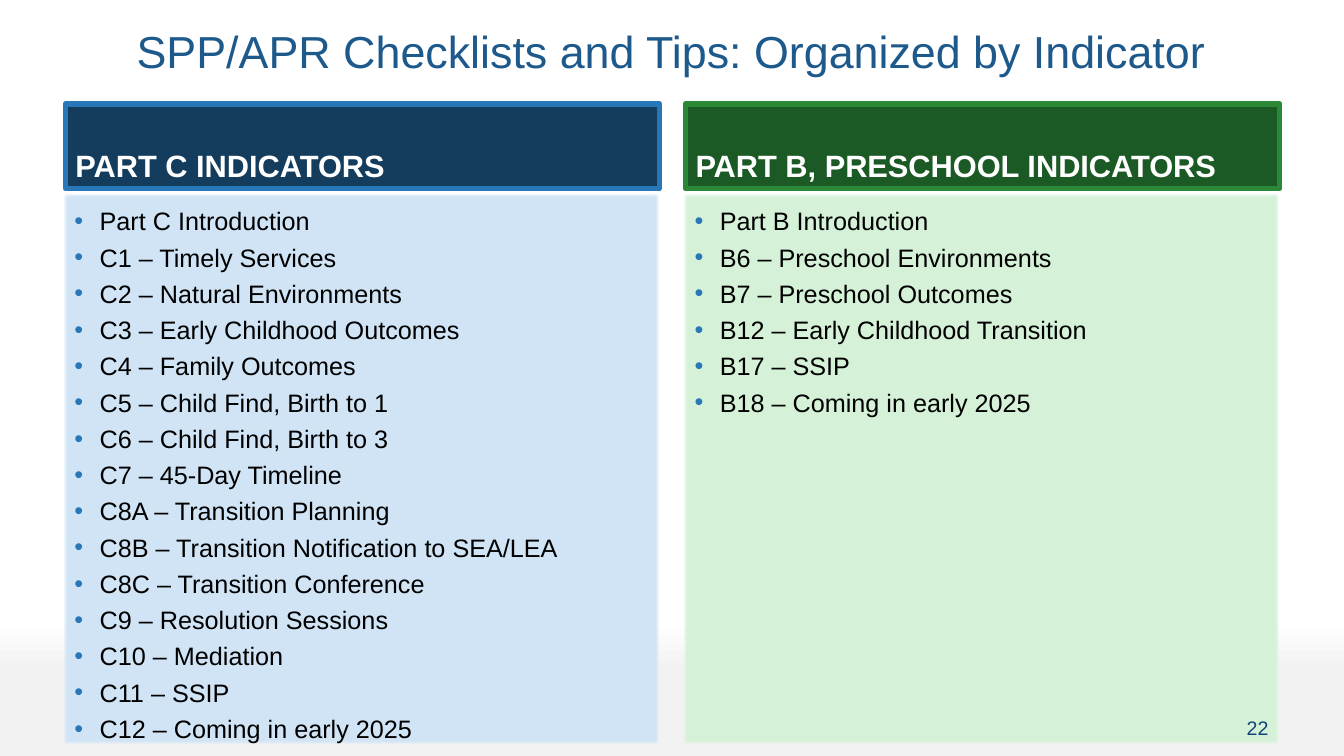
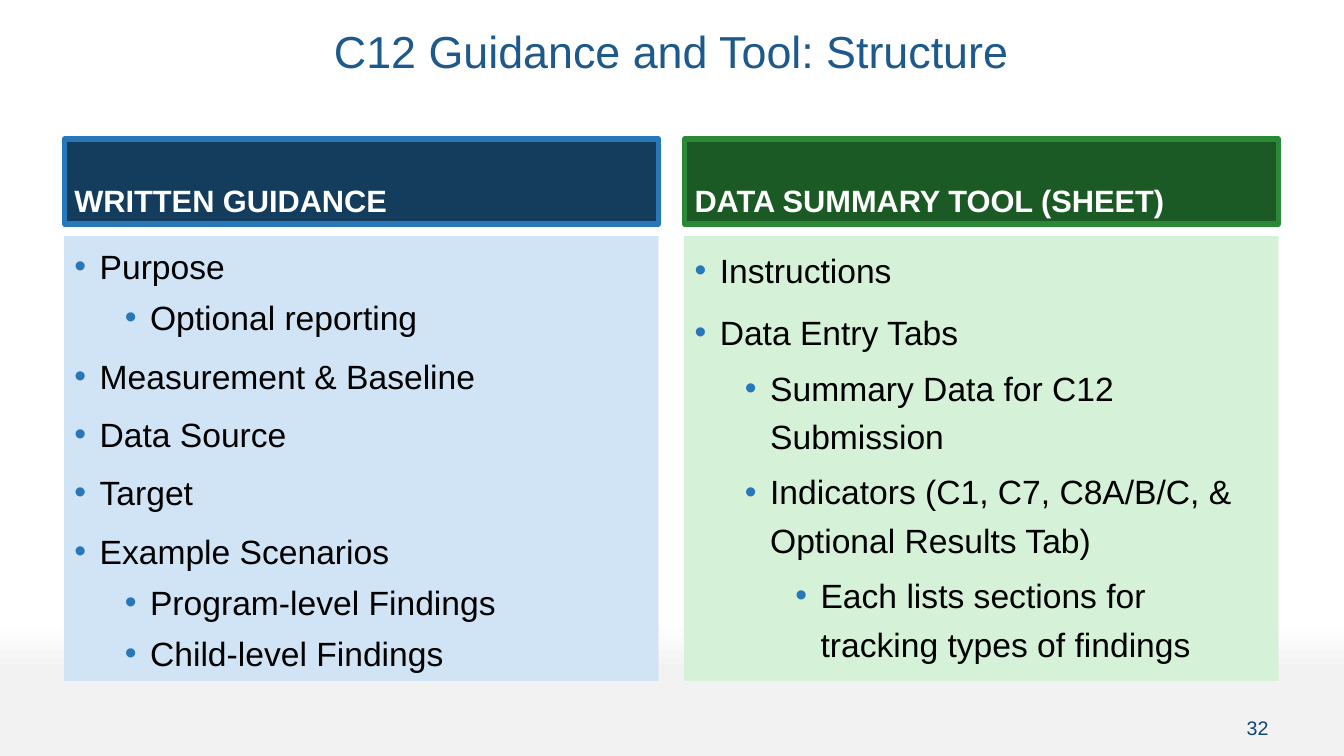
from dataclasses import dataclass

from pptx import Presentation
from pptx.dml.color import RGBColor
from pptx.enum.shapes import MSO_SHAPE as Shape
from pptx.enum.text import MSO_ANCHOR as Anchor, PP_ALIGN as Align
from pptx.oxml.ns import qn
from pptx.oxml.xmlchemy import OxmlElement
from pptx.util import Inches, Pt


@dataclass(frozen=True)
class Scheme:
    header: str
    border: str
    panel: str


@dataclass(frozen=True)
class Theme:
    font: str = "Arial"
    title: str = "1D598B"
    number: str = "104578"
    bullet: str = "2777B9"
    body: str = "000000"
    light: str = "FFFFFF"
    background: tuple = ((0.82, "FFFFFF"), (0.89, "F2F2F2"))
    schemes: tuple = (
        Scheme("133C5D", "2777B9", "D0E4F5"),
        Scheme("1C5A25", "2A8837", "D5F2D9"),
    )
    title_size: int = 32
    header_size: int = 22
    number_size: int = 14


@dataclass(frozen=True)
class ListStyle:
    size: int
    line_spacing: float
    gaps: tuple  # points before a paragraph, by level


THEME = Theme()
LEFT, WIDTH, COLUMN_WIDTH = 0.64, 12.04, 5.89
COLUMN_STEP = WIDTH - COLUMN_WIDTH
HEADER_HEIGHT = 0.84

COMPACT = ListStyle(18, 1.2, (0,))
SNUG = ListStyle(24, 1.1, (10, 5))
ROOMY = ListStyle(24, 1.2, (10, 5, 5))

PART_C = [
    (0, "Part C Introduction"),
    (0, "C1 – Timely Services"),
    (0, "C2 – Natural Environments"),
    (0, "C3 – Early Childhood Outcomes"),
    (0, "C4 – Family Outcomes"),
    (0, "C5 – Child Find, Birth to 1"),
    (0, "C6 – Child Find, Birth to 3"),
    (0, "C7 – 45-Day Timeline"),
    (0, "C8A – Transition Planning"),
    (0, "C8B – Transition Notification to SEA/LEA"),
    (0, "C8C – Transition Conference"),
    (0, "C9 – Resolution Sessions"),
    (0, "C10 – Mediation"),
    (0, "C11 – SSIP"),
    (0, "C12 – Coming in early 2025"),
]
PART_B = [
    (0, "Part B Introduction"),
    (0, "B6 – Preschool Environments"),
    (0, "B7 – Preschool Outcomes"),
    (0, "B12 – Early Childhood Transition"),
    (0, "B17 – SSIP"),
    (0, "B18 – Coming in early 2025"),
]
GUIDANCE = [
    (0, "Purpose"),
    (1, "Optional reporting"),
    (0, "Measurement & Baseline"),
    (0, "Data Source"),
    (0, "Target"),
    (0, "Example Scenarios"),
    (1, "Program-level Findings"),
    (1, "Child-level Findings"),
]
TOOL = [
    (0, "Instructions"),
    (0, "Data Entry Tabs"),
    (1, "Summary Data for C12 Submission"),
    (1, "Indicators (C1, C7, C8A/B/C, & Optional Results Tab)"),
    (2, "Each lists sections for tracking types of findings"),
]


def color(value):
    return RGBColor.from_string(value)


def add_child(parent, tag, **attributes):
    child = OxmlElement(tag)
    for name, value in attributes.items():
        child.set(name, str(value))
    parent.append(child)
    return child


def add_run(para, text, size, ink, bold=False):
    span = para.add_run()
    span.text = text
    span.font.name = THEME.font
    span.font.size = Pt(size)
    span.font.bold = bold
    span.font.color.rgb = color(ink)


def add_line(page, area, text, size, ink, align, anchor=Anchor.TOP):
    """Add a text box that holds one paragraph."""
    box = page.shapes.add_textbox(*map(Inches, area))
    box.text_frame.word_wrap = True
    box.text_frame.vertical_anchor = anchor
    para = box.text_frame.paragraphs[0]
    para.alignment = align
    add_run(para, text, size, ink)
    return para


def add_box(page, area, fill, anchor):
    box = page.shapes.add_shape(Shape.RECTANGLE, *map(Inches, area))
    box.shadow.inherit = False
    box.fill.solid()
    box.fill.fore_color.rgb = color(fill)
    box.line.fill.background()
    box.text_frame.word_wrap = True
    box.text_frame.vertical_anchor = anchor
    return box


def add_header(page, area, text, scheme):
    box = add_box(page, area, scheme.header, Anchor.BOTTOM)
    box.line.color.rgb = color(scheme.border)
    box.line.width = Pt(4)
    para = box.text_frame.paragraphs[0]
    para.alignment = Align.LEFT
    add_run(para, text, THEME.header_size, THEME.light, bold=True)


def set_bullet(para, level):
    para.level = level
    properties = para._p.get_or_add_pPr()
    properties.set("marL", str(Inches(0.25 + 0.5 * level)))
    properties.set("indent", str(Inches(-0.25)))
    add_child(add_child(properties, "a:buClr"), "a:srgbClr", val=THEME.bullet)
    add_child(properties, "a:buFont", typeface=THEME.font)
    add_child(properties, "a:buChar", char="•")


def add_list_panel(page, area, items, style, scheme):
    """Add a soft-edged panel with a bulleted list of (level, text) items."""
    panel = add_box(page, area, scheme.panel, Anchor.TOP)
    effects = panel._element.spPr.find(qn("a:effectLst"))
    add_child(effects, "a:softEdge", rad=Pt(0.5))
    frame = panel.text_frame
    for index, (level, text) in enumerate(items):
        para = frame.add_paragraph() if index else frame.paragraphs[0]
        para.alignment = Align.LEFT
        para.line_spacing = style.line_spacing
        para.space_before = Pt(style.gaps[level])
        set_bullet(para, level)
        add_run(para, text, style.size, THEME.body)


def add_page(deck, title, number, header_at, panel_top, panel_height, columns):
    """Add a two-column slide; each column is (header, items, list style)."""
    page = deck.slides.add_slide(deck.slide_layouts[6])
    fill = page.background.fill
    fill.gradient()
    fill.gradient_angle = 270
    for stop, (position, tone) in zip(fill.gradient_stops, THEME.background):
        stop.position = position
        stop.color.rgb = color(tone)

    heading = add_line(page, (LEFT, 0.25, WIDTH, 1), title,
                       THEME.title_size, THEME.title, Align.CENTER)
    heading.line_spacing = 0.9
    header_left, header_top = header_at
    for index, (header, items, style) in enumerate(columns):
        shift = index * COLUMN_STEP
        scheme = THEME.schemes[index]
        add_header(page, (header_left + shift, header_top, COLUMN_WIDTH,
                          HEADER_HEIGHT), header, scheme)
        add_list_panel(page, (LEFT + shift, panel_top, COLUMN_WIDTH,
                              panel_height), items, style, scheme)
    add_line(page, (11.33, 6.94, 1.35, 0.55), number,
             THEME.number_size, THEME.number, Align.RIGHT, Anchor.MIDDLE)


def main():
    deck = Presentation()
    deck.slide_width, deck.slide_height = Inches(13.33), Inches(7.5)
    add_page(deck, "SPP/APR Checklists and Tips: Organized by Indicator", "22",
             (0.65, 1.03), 1.93, 5.45,
             [("PART C INDICATORS", PART_C, COMPACT),
              ("PART B, PRESCHOOL INDICATORS", PART_B, COMPACT)])
    add_page(deck, "C12 Guidance and Tool: Structure", "32",
             (LEFT, 1.38), 2.35, 4.4,
             [("WRITTEN GUIDANCE", GUIDANCE, SNUG),
              ("DATA SUMMARY TOOL (SHEET)", TOOL, ROOMY)])
    deck.save("out.pptx")


if __name__ == "__main__":
    main()
